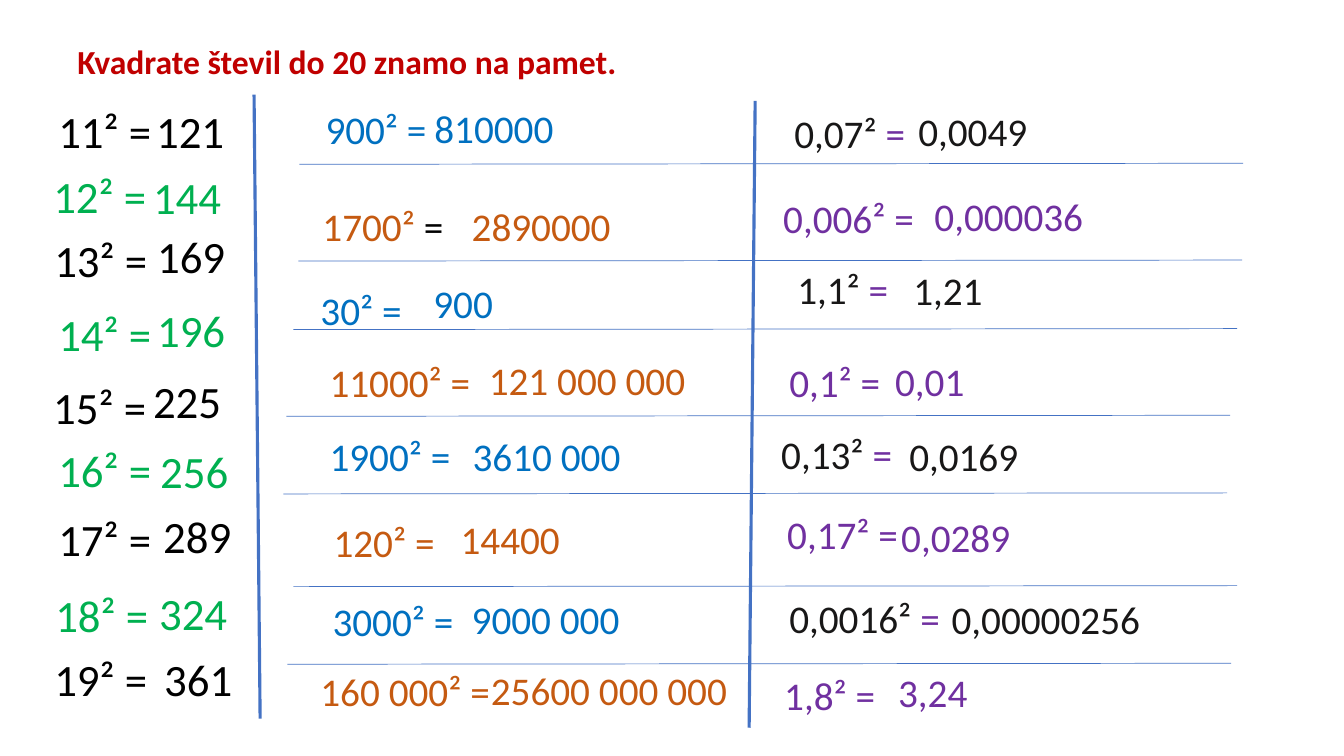
from itertools import cycle

from lxml.etree import SubElement
from pptx import Presentation
from pptx.dml.color import RGBColor as Rgb
from pptx.enum.shapes import MSO_CONNECTOR as Link
from pptx.enum.text import MSO_AUTO_SIZE as Fit
from pptx.oxml.ns import qn
from pptx.util import Pt

PX = 9144  # EMU in one px, 100 px to the inch
RED = Rgb(0xC0, 0x00, 0x00)
BLACK = Rgb(0x00, 0x00, 0x00)
GREEN = Rgb(0x00, 0xB0, 0x50)
BLUE = Rgb(0x00, 0x70, 0xC0)
ORANGE = Rgb(0xC5, 0x5A, 0x11)
DARK = Rgb(0x18, 0x17, 0x17)
PURPLE = Rgb(0x70, 0x30, 0xA0)
RULE = Rgb(0x44, 0x72, 0xC4)

# Each row: base, left, top, width, then its square, left, top, width
TEENS = [
    ("11", 48, 98, 124, "121", 145, 98, 116),
    ("12", 43, 162, 181, "144", 142, 163, 116),
    ("13", 44, 226, 232, "169", 146, 222, 116),
    ("14", 48, 299, 189, "196", 146, 295, 116),
    ("15", 43, 372, 157, "225", 142, 366, 116),
    ("16", 48, 434, 213, "256", 149, 435, 116),
    ("17", 48, 503, 250, "289", 152, 500, 116),
    ("18", 45, 578, 232, "324", 148, 576, 116),
    ("19", 44, 642, 127, "361", 153, 642, 116),
]
WHOLES = [
    ("900", 313, 100, 122, "810000", 421, 99, 155),
    ("1700", 310, 196, 152, "2890000", 458, 196, 175),
    ("30", 308, 279, 122, "900", 420, 272, 155),
    ("11000", 317, 351, 174, "121 000 000", 475, 349, 226),
    ("1900", 317, 424, 174, "3610 000", 459, 424, 174),
    ("120", 321, 509, 174, "14400", 447, 506, 175),
    ("3000", 320, 588, 174, "9000 000", 458, 586, 208),
    ("160 000", 308, 657, 226, "25600 000 000", 477, 656, 291),
]
PARTS = [
    ("0,07", 778, 104, 133, "0,0049", 901, 102, 133),
    ("0,006", 767, 188, 190, "0,000036", 917, 186, 190),
    ("1,1", 781, 258, 133, "1,21", 896, 259, 133),
    ("0,1", 773, 351, 190, "0,01", 878, 350, 190),
    ("0,13", 765, 422, 205, "0,0169", 892, 424, 133),
    ("0,17", 771, 501, 190, "0,0289", 884, 504, 190),
    ("0,0016", 773, 585, 208, "0,00000256", 934, 586, 218),
    ("1,8", 768, 661, 190, "3,24", 881, 658, 190),
]
RULES = [(297, 163), (296, 259), (291, 327), (284, 413),
         (281, 490), (291, 582), (285, 659)]
RULE_WIDTH = 936


class Sheet:
    def __init__(self, slide, font="Calibri"):
        self.shapes = slide.shapes
        self.font = font

    def text(self, words, x, y, w, h, *, size, color, bold=False,
             tail="", tint=None):
        """Put words in a box; a tail may follow in its own tint."""
        box = self.shapes.add_textbox(x * PX, y * PX, w * PX, h * PX)
        frame = box.text_frame
        frame.word_wrap = True
        frame.auto_size = Fit.SHAPE_TO_FIT_TEXT
        runs = [(words, color), (tail, tint)]
        if tint in (None, color):
            runs = [(words + tail, color)]
        for part, shade in runs:
            run = frame.paragraphs[0].add_run()
            run.text = part
            font = run.font
            font.name, font.size, font.bold = self.font, Pt(size), bold
            font.color.rgb = shade

    def line(self, x1, y1, x2, y2, width):
        rule = self.shapes.add_connector(
            Link.STRAIGHT, x1 * PX, y1 * PX, x2 * PX, y2 * PX)
        rule.line.color.rgb = RULE
        rule.line.width = Pt(width)
        SubElement(rule._element.spPr, qn("a:effectLst"))

    def column(self, rows, colors, size, h, tints=None):
        """Set one column of squares, its colors taken in turn by row."""
        tints = tints or {}
        for row, color in zip(rows, cycle(colors)):
            base, x, y, w, square, *place = row
            tint = tints.get(base)
            self.text(base + "²", x, y, w, h, size=size, color=color,
                      tail=" =", tint=tint)
            self.text(square, *place, h, size=size, color=color)


def main():
    deck = Presentation()
    deck.slide_width, deck.slide_height = 1333 * PX, 750 * PX
    sheet = Sheet(deck.slides.add_slide(deck.slide_layouts[6]))

    sheet.text("Kvadrate števil do 20 znamo na pamet.", 67, 36, 685, 50,
               size=24, color=RED, bold=True)
    sheet.column(TEENS, (BLACK, GREEN), 32, 64)
    sheet.line(252, 94, 258, 713, 2.25)
    for x, y in RULES:
        sheet.line(x, y, x + RULE_WIDTH, y - 1, 0.5)
    sheet.column(WHOLES, (BLUE, ORANGE), 28, 57, {"1700": BLACK})
    sheet.line(749, 100, 743, 722, 2.25)
    sheet.column(PARTS, (DARK, PURPLE), 28, 57,
                 {row[0]: PURPLE for row in PARTS})

    deck.save("out.pptx")


if __name__ == "__main__":
    main()
